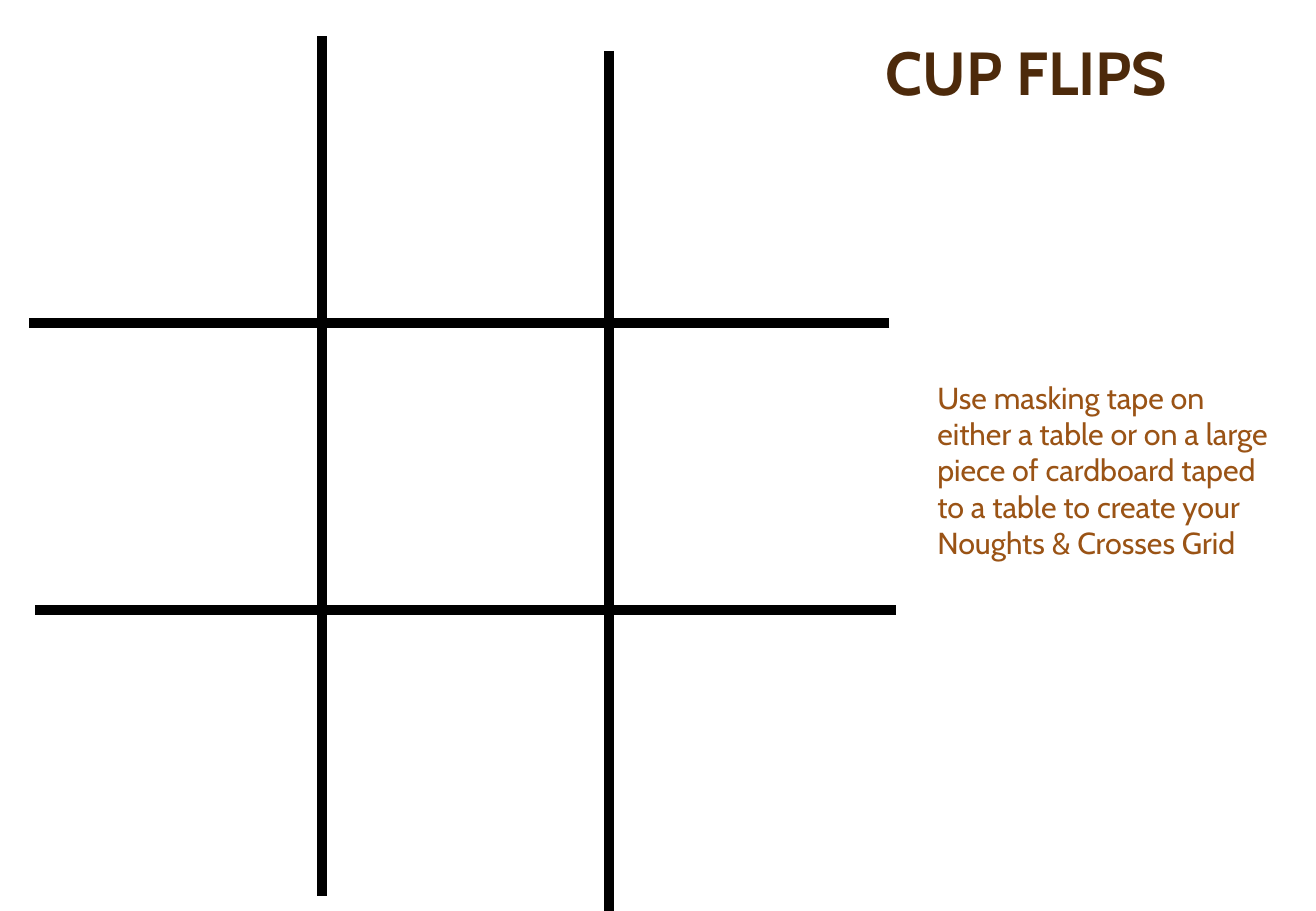
from dataclasses import dataclass

from lxml import etree
from pptx import Presentation
from pptx import util as u
from pptx.dml.color import RGBColor
from pptx.enum import shapes, text
from pptx.oxml.ns import qn


@dataclass(frozen=True)
class Theme:
    font: str = "Cabin"
    head: str = "4D2A0B"
    note: str = "9A5315"
    tape: str = "000000"
    big: int = 36
    small: int = 18
    thick: int = 6


THEME = Theme()
WIDE, HIGH = 10.83, 7.5
CELL = 2.36
LEFT, TOP = 0.29, 0.3
SPAN = 3 * CELL


def put(box, words, area, size, color, bold, frame, para):
    """Place and format a placeholder; area is in shares of the slide."""
    x, y, w, h = area
    place = {"left": x * WIDE, "top": y * HIGH,
             "width": w * WIDE, "height": h * HIGH}
    for key, val in place.items():
        setattr(box, key, u.Inches(val))
    body = box.text_frame
    body.text = words
    line = body.paragraphs[0]
    props = line._p.get_or_add_pPr()
    for key in ("marL", "indent"):
        props.set(key, "0")
    etree.SubElement(props, qn("a:buNone"))
    font = {"name": THEME.font, "size": u.Pt(size), "bold": bold}
    frame = {"word_wrap": True, "auto_size": text.MSO_AUTO_SIZE.NONE, **frame}
    para = {"space_before": u.Pt(0), **para}
    for item, vals in ((body, frame), (line, para), (line.runs[0].font, font)):
        for key, val in vals.items():
            setattr(item, key, val)
    line.runs[0].font.color.rgb = RGBColor.from_string(color)


def tape(slide, x1, y1, x2, y2):
    strip = slide.shapes.add_connector(
        shapes.MSO_CONNECTOR.STRAIGHT, *map(u.Inches, (x1, y1, x2, y2)))
    strip.line.width = u.Pt(THEME.thick)
    strip.line.color.rgb = RGBColor.from_string(THEME.tape)
    etree.SubElement(strip._element.spPr, qn("a:effectLst"))


def grid(slide):
    """Lay two strips each way, each pair slightly out of step."""
    for col, top in ((1, TOP), (2, TOP + 0.12)):
        x = LEFT + col * CELL
        tape(slide, x, top, x, top + SPAN)
    for row, left in ((1, LEFT - 0.05), (2, LEFT)):
        y = TOP + row * CELL
        tape(slide, left + SPAN, y, left, y)


def main():
    deck = Presentation()
    deck.slide_width, deck.slide_height = u.Inches(WIDE), u.Inches(HIGH)
    slide = deck.slides.add_slide(deck.slide_layouts[1])
    head, note = slide.placeholders
    put(head, "CUP FLIPS", (0.572, 0.031, 0.416, 0.095),
        THEME.big, THEME.head, True,
        {"vertical_anchor": text.MSO_ANCHOR.BOTTOM},
        {"alignment": text.PP_ALIGN.CENTER, "line_spacing": 0.9})
    grid(slide)
    put(note, "Use masking tape on either a table or on a large piece of "
        "cardboard taped to a table to create your Noughts & Crosses Grid",
        (0.703, 0.409, 0.271, 0.296), THEME.small, THEME.note, False,
        {"vertical_anchor": text.MSO_ANCHOR.TOP},
        {"alignment": text.PP_ALIGN.LEFT, "line_spacing": 1.0})
    deck.save("out.pptx")


if __name__ == "__main__":
    main()
